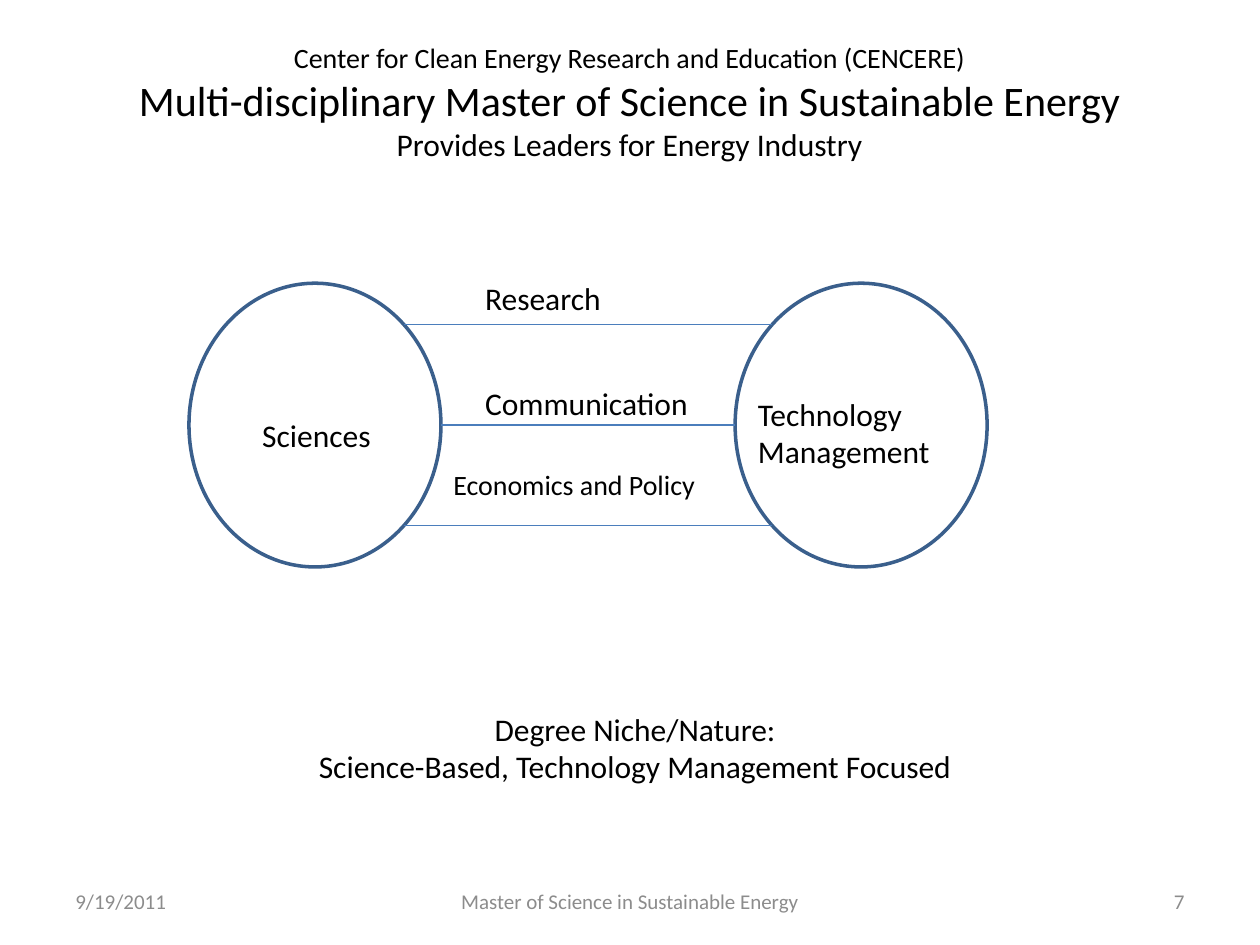
"""Build the slide on the Sustainable Energy master's degree."""
import math

import pptx
import pptx.dml.color
import pptx.enum.shapes
import pptx.enum.text
import pptx.oxml.ns
import pptx.util
from lxml import etree

Cm = pptx.util.Cm
Pt = pptx.util.Pt
RGB = pptx.dml.color.RGBColor
ALIGN = pptx.enum.text.PP_ALIGN
ANCHOR = pptx.enum.text.MSO_ANCHOR

BLACK = RGB(0, 0, 0)
GRAY = RGB(0x8C, 0x8C, 0x8C)
NAVY = RGB(0x3A, 0x5F, 0x8C)
BLUE = RGB(0x4B, 0x7E, 0xBC)

TITLE = [
    ("Center for Clean Energy Research and Education (CENCERE)", 16),
    ("Multi-disciplinary Master of Science in Sustainable Energy", 24),
    ("Provides Leaders for Energy Industry", 18),
]
NICHE = [
    ("Degree Niche/Nature:", 18),
    ("Science-Based, Technology Management Focused", 18),
]
LABELS = [
    ([("Technology Management", 18)], (15.03, 7.83, 5.97, 1.8), ALIGN.LEFT),
    ([("Sciences", 18)], (4.45, 8.26, 3.86, 1.02), ALIGN.CENTER),
    ([("Research", 18)], (9.53, 5.5, 4.45, 1.02), ALIGN.LEFT),
    ([("Communication", 18)], (9.53, 7.62, 4.88, 1.02), ALIGN.LEFT),
    ([("Economics and Policy", 16)], (8.89, 9.31, 6.15, 0.94), ALIGN.LEFT),
    (NICHE, (4.45, 14.18, 16.71, 1.8), ALIGN.CENTER),
]
FOOTER = [
    ("9/19/2011", 1.27, 5.92, ALIGN.LEFT),
    ("Master of Science in Sustainable Energy", 8.68, 8.04, ALIGN.CENTER),
    ("7", 18.21, 5.92, ALIGN.RIGHT),
]
LEFT, RIGHT = 6.35, 17.36
MID = 8.57
WIDE, HIGH = 5.08, 5.72
ANGLES = (-45, 0, 45)


def write(slide, lines, box, align=ALIGN.LEFT, color=BLACK, anchor=ANCHOR.TOP):
    """Add a text box with one paragraph for each (text, size) line."""
    frame = slide.shapes.add_textbox(*map(Cm, box)).text_frame
    frame.word_wrap = True
    frame.vertical_anchor = anchor
    for i, (text, size) in enumerate(lines):
        para = frame.add_paragraph() if i else frame.paragraphs[0]
        para.alignment = align
        run = para.add_run()
        run.text = text
        run.font.name = "Calibri"
        run.font.size = Pt(size)
        run.font.color.rgb = color


def ring(slide, mid):
    """Add an outlined ellipse centred at mid."""
    oval = slide.shapes.add_shape(
        pptx.enum.shapes.MSO_SHAPE.OVAL,
        Cm(mid - WIDE / 2), Cm(MID - HIGH / 2), Cm(WIDE), Cm(HIGH))
    oval.shadow.inherit = False
    oval.fill.background()
    oval.line.color.rgb = NAVY
    oval.line.width = Pt(2)


def link(slide, angle):
    """Join both ellipses at the same angle from their centres."""
    turn = math.radians(angle)
    reach = WIDE / 2 * math.cos(turn)
    y = Cm(MID + HIGH / 2 * math.sin(turn))
    line = slide.shapes.add_connector(
        pptx.enum.shapes.MSO_CONNECTOR.STRAIGHT,
        Cm(LEFT + reach), y, Cm(RIGHT - reach), y)
    line.line.color.rgb = BLUE
    line.line.width = Pt(0.75)
    props = line._element.spPr
    etree.SubElement(props, pptx.oxml.ns.qn("a:effectLst"))


def main():
    """Draw every part and save the file."""
    deck = pptx.Presentation()
    deck.slide_width, deck.slide_height = Cm(25.4), Cm(19.05)
    slide = deck.slides.add_slide(deck.slide_layouts[6])
    write(slide, TITLE, (1.9, 0, 21.59, 4.09), align=ALIGN.CENTER,
          anchor=ANCHOR.MIDDLE)
    for mid in (RIGHT, LEFT):
        ring(slide, mid)
    for angle in ANGLES:
        link(slide, angle)
    for lines, box, align in LABELS:
        write(slide, lines, box, align=align)
    for text, x, wide, align in FOOTER:
        write(slide, [(text, 12)], (x, 17.65, wide, 1.02), align=align,
              color=GRAY, anchor=ANCHOR.MIDDLE)
    deck.save("out.pptx")


if __name__ == "__main__":
    main()
